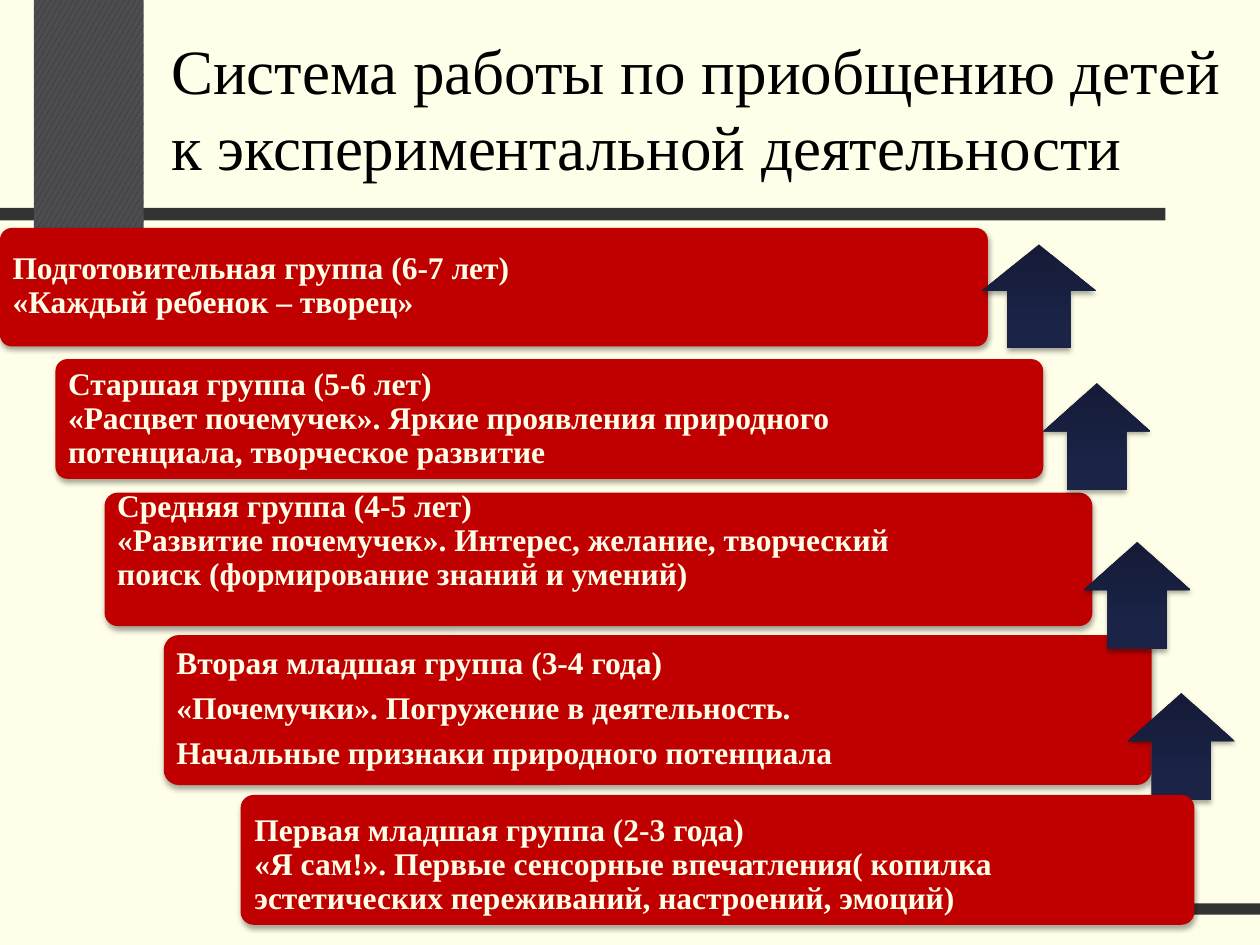
from copy import deepcopy
from dataclasses import dataclass

from lxml import etree
from pptx import Presentation
from pptx.dml.color import RGBColor
from pptx.enum.dml import MSO_PATTERN
from pptx.enum.shapes import MSO_SHAPE
from pptx.enum.text import MSO_ANCHOR
from pptx.oxml.ns import qn
from pptx.util import Inches, Pt

RECT = MSO_SHAPE.RECTANGLE
ROUNDED = MSO_SHAPE.ROUNDED_RECTANGLE
DOWN_ARROW = MSO_SHAPE.DOWN_ARROW
CONFETTI = MSO_PATTERN.LARGE_CONFETTI
BOTTOM, MIDDLE = MSO_ANCHOR.BOTTOM, MSO_ANCHOR.MIDDLE

FONT = "Times New Roman"
CREAM, BLACK, RED, GREY = "FFFFE9", "000000", "C00000", "333333"
ARROW_STOPS = ((0, "151B37"), (0.8, "1B2447"), (1, "1A2348"))


@dataclass
class Box:
    left: float
    top: float
    width: float
    height: float

    def lengths(self) -> tuple:
        return tuple(map(Inches, (self.left, self.top, self.width, self.height)))


@dataclass
class Step:
    card: Box
    label: Box
    text: str
    inset: float = 0.07


STEPS = [
    Step(Box(0, 1.81, 7.84, 0.94), Box(0.03, 1.83, 6.34, 0.89),
         "Подготовительная группа (6-7 лет)\v«Каждый ребенок – творец»"),
    Step(Box(0.44, 2.85, 7.84, 0.95), Box(0.47, 2.88, 6.28, 0.89),
         "Старшая группа (5-6 лет)\v«Расцвет почемучек». Яркие проявления "
         "природного потенциала, творческое развитие"),
    Step(Box(0.83, 3.91, 7.84, 1.06), Box(0.86, 3.8, 6.28, 0.99),
         "Средняя группа (4-5 лет)\v«Развитие почемучек». Интерес, желание, "
         "творческий поиск (формирование знаний и умений)"),
    Step(Box(1.3, 5.04, 7.84, 1.19), Box(1.33, 5.07, 6.27, 1.12),
         "Вторая младшая группа (3-4 года)\n«Почемучки». Погружение в деятельность.\n"
         "Начальные признаки природного потенциала"),
    Step(Box(1.91, 6.31, 7.57, 1.03), Box(1.96, 6.35, 7.17, 1.03),
         "Первая младшая группа (2-3 года)\v«Я сам!». Первые сенсорные впечатления( "
         "копилка эстетических переживаний, настроений, эмоций)", 0.06),
]
SIDE_ARROWS = [Box(left, top, 0.85, 0.85)
               for left, top in ((8.28, 3.04), (8.6, 4.3), (8.95, 5.5))]
TOP_ARROW = Box(7.79, 1.94, 0.91, 0.82)


def rgb(color: str) -> RGBColor:
    return RGBColor.from_string(color)


def add_block(s, kind, box: Box, color: str):
    sp = s.shapes.add_shape(kind, *box.lengths())
    sp.shadow.inherit = False
    sp.line.fill.background()
    sp.fill.solid()
    sp.fill.fore_color.rgb = rgb(color)
    return sp


def add_shadow(sp) -> None:
    effects = sp._element.spPr.find(qn("a:effectLst"))
    shadow = etree.SubElement(effects, qn("a:outerShdw"), blurRad=str(Pt(3.1)),
                              dist=str(Pt(1.8)), dir="5400000", rotWithShape="0")
    color = etree.SubElement(shadow, qn("a:srgbClr"), val=BLACK)
    etree.SubElement(color, qn("a:alpha"), val="35000")


def add_text(s, box: Box, text: str, size: float, color: str, anchor,
             bold: bool = False, inset: float | None = None,
             spacing: float | None = None, after: float = 0) -> None:
    tf = s.shapes.add_textbox(*box.lengths()).text_frame
    tf.word_wrap = True
    tf.vertical_anchor = anchor
    if inset is not None:
        tf.margin_left = tf.margin_right = Inches(inset)
        tf.margin_top = tf.margin_bottom = Inches(inset)
    tf.text = text
    for p in tf.paragraphs:
        p.line_spacing = spacing
        p.space_after = Pt(after)
        p.font.name = FONT
        p.font.size = Pt(size)
        p.font.bold = bold
        p.font.color.rgb = rgb(color)


def add_step(s, step: Step) -> None:
    sp = add_block(s, ROUNDED, step.card, RED)
    sp.adjustments[0] = 0.1
    add_shadow(sp)
    add_text(s, step.label, step.text, 18, CREAM, MIDDLE, True, step.inset, 0.9, 6.3)


def add_arrow(s, box: Box) -> None:
    sp = add_block(s, DOWN_ARROW, box, ARROW_STOPS[0][1])
    sp.rotation = 180
    sp.adjustments[0], sp.adjustments[1] = 0.55, 0.45
    sp.fill.gradient()
    sp.fill.gradient_angle = 90
    stops = sp._element.spPr.find(qn("a:gradFill")).find(qn("a:gsLst"))
    stops.append(deepcopy(stops[-1]))
    for stop, (position, color) in zip(sp.fill.gradient_stops, ARROW_STOPS):
        stop.position = position
        stop.color.rgb = rgb(color)
    add_shadow(sp)


def main() -> None:
    prs = Presentation()
    prs.slide_width, prs.slide_height = Inches(10), Inches(7.5)
    s = prs.slides.add_slide(prs.slide_layouts[6])
    s.background.fill.solid()
    s.background.fill.fore_color.rgb = rgb(CREAM)

    add_block(s, RECT, Box(0, 1.65, 9.25, 0.1), GREY)
    band = add_block(s, RECT, Box(0.27, 0, 0.87, 2.01), GREY)
    band.fill.patterned()
    band.fill.pattern = CONFETTI
    band.fill.fore_color.rgb = rgb("262D4C")
    band.fill.back_color.rgb = rgb("4D4D4D")
    add_block(s, RECT, Box(7.73, 7.17, 2.27, 0.09), GREY)

    add_text(s, Box(1.26, 0.12, 8.66, 1.38),
             "Система работы по приобщению детей\vк экспериментальной деятельности",
             36, BLACK, BOTTOM)
    for step in STEPS[:-1]:
        add_step(s, step)
    for box in SIDE_ARROWS:
        add_arrow(s, box)
    add_step(s, STEPS[-1])
    add_arrow(s, TOP_ARROW)
    prs.save("out.pptx")


if __name__ == "__main__":
    main()
